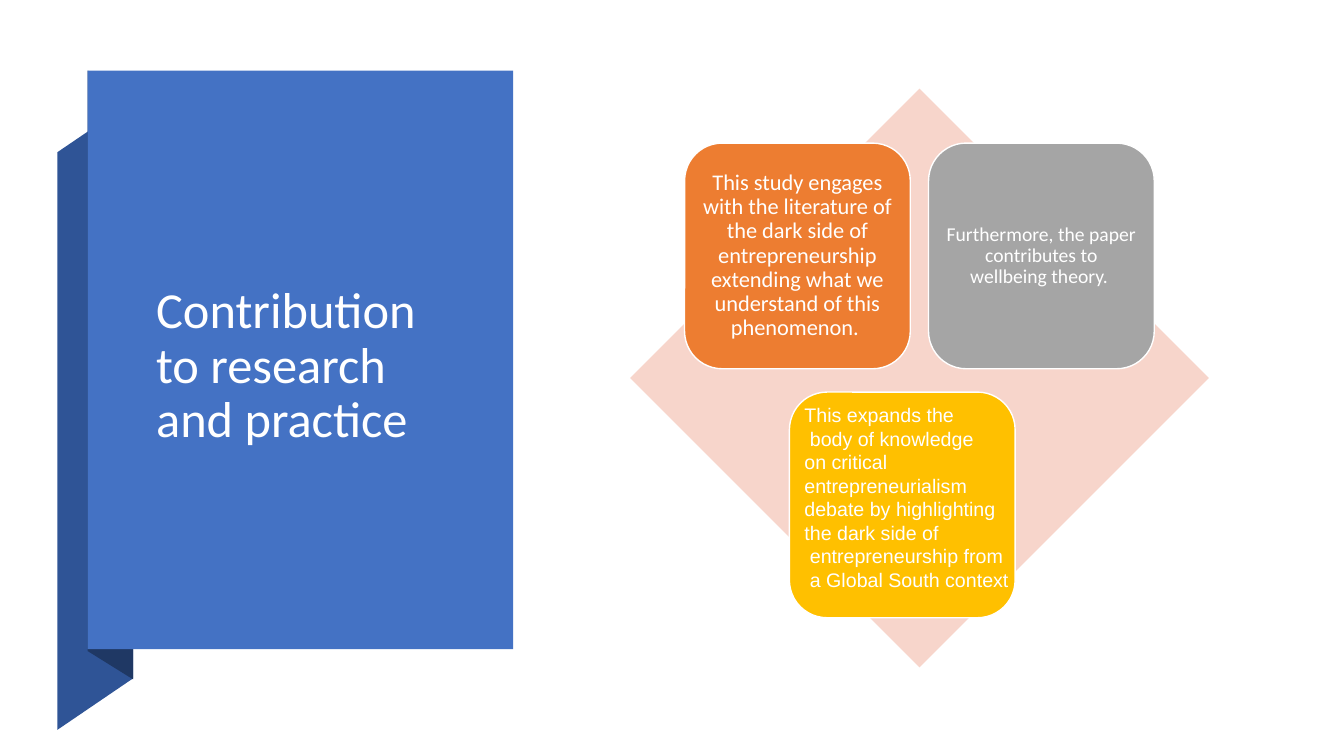
from pptx import Presentation
from pptx.dml.color import RGBColor
from pptx.enum.shapes import MSO_SHAPE
from pptx.enum.text import MSO_ANCHOR, PP_ALIGN
from pptx.util import Inches, Pt

RECT, DIAMOND, ROUNDED = MSO_SHAPE.RECTANGLE, MSO_SHAPE.DIAMOND, MSO_SHAPE.ROUNDED_RECTANGLE
TOP, MIDDLE = MSO_ANCHOR.TOP, MSO_ANCHOR.MIDDLE
LEFT, CENTER, JUSTIFY = PP_ALIGN.LEFT, PP_ALIGN.CENTER, PP_ALIGN.JUSTIFY

WHITE = "FFFFFF"
TITLE = "Contribution to research and practice"
ENGAGES = ("This study engages with the literature of the dark side of entrepreneurship "
           "extending what we understand of this phenomenon. ")
WELLBEING = "Furthermore, the paper contributes to wellbeing theory. "
EXPANDS = ["This expands the", " body of knowledge ", "on critical ", "entrepreneurialism ",
           "debate by highlighting ", "the dark side of", " entrepreneurship from",
           " a Global South context"]


def rgb(value):
    return RGBColor.from_string(value)


def paint(sp, fill, line=None):
    sp.shadow.inherit = False
    sp.fill.solid()
    sp.fill.fore_color.rgb = rgb(fill)
    if line:
        sp.line.color.rgb = rgb(line)
        sp.line.width = Pt(1)
    else:
        sp.line.fill.background()


def add_shape(s, kind, x, y, w, h, fill, line=None):
    sp = s.shapes.add_shape(kind, Inches(x), Inches(y), Inches(w), Inches(h))
    paint(sp, fill, line)
    return sp


def add_polygon(s, points, fill):
    start, *rest = [(Inches(x), Inches(y)) for x, y in points]
    builder = s.shapes.build_freeform(*start)
    builder.add_line_segments(rest, close=True)
    paint(builder.convert_to_shape(), fill)


def write(sp, lines, size, font="Calibri", align=LEFT, anchor=MIDDLE, spacing=0.9,
          margins=(0.1, 0.05)):
    """Fill a shape with white paragraphs; margins are (sides, top and bottom)."""
    tf = sp.text_frame
    tf.word_wrap = True
    tf.vertical_anchor = anchor
    tf.margin_left = tf.margin_right = Inches(margins[0])
    tf.margin_top = tf.margin_bottom = Inches(margins[1])
    for i, line in enumerate(lines):
        p = tf.paragraphs[0] if i == 0 else tf.add_paragraph()
        p.text = line
        p.alignment = align
        p.line_spacing = spacing
        p.font.name = font
        p.font.size = Pt(size)
        p.font.color.rgb = rgb(WHITE)


def add_textbox(s, x, y, w, h):
    return s.shapes.add_textbox(Inches(x), Inches(y), Inches(w), Inches(h))


def add_title_banner(s, x, y, w, h):
    """Blue panel with a ribbon folded behind its left edge."""
    outer, fold = x - 0.3, x + 0.45
    add_polygon(s, [(outer, y + 6.54), (fold, y + 6.03), (fold, y + 0.3), (outer, y + 0.81)],
                "2F5496")
    add_polygon(s, [(x, y + 5.76), (fold, y + 6.04), (fold, y + 0.29), (x, y)], "1F3864")
    add_shape(s, RECT, x, y, w, h, "4472C4")
    write(add_textbox(s, x + 0.58, y + 0.97, 3.01, 3.94), [TITLE], 36)


def add_contributions(s, x, y, size):
    """Diamond carrying three rounded cards."""
    add_shape(s, DIAMOND, x, y, size, size, "F7D5CB")
    card = 0.39 * size
    cards = [(0.54, 0.54, "ED7D31", ENGAGES, 16, 0.07),
             (2.96, 0.54, "A5A5A5", WELLBEING, 14, 0.06),
             (1.58, 3.01, "FFC000", None, None, None)]
    for dx, dy, fill, text, points, margin in cards:
        sp = add_shape(s, ROUNDED, x + dx, y + dy, card, card, fill, WHITE)
        if text:
            write(sp, [text], points, align=CENTER, margins=(margin, margin))
    write(add_textbox(s, x + 1.63, y + 3.07, 2.33, 1.99), EXPANDS, 14, "Arial",
          JUSTIFY, TOP, 1.0)


def main():
    prs = Presentation()
    prs.slide_width, prs.slide_height = Inches(13.33), Inches(7.5)
    s = prs.slides.add_slide(prs.slide_layouts[6])
    add_title_banner(s, 0.87, 0.7, 4.22, 5.74)
    add_contributions(s, 6.25, 0.88, 5.74)
    prs.save("out.pptx")


if __name__ == "__main__":
    main()
